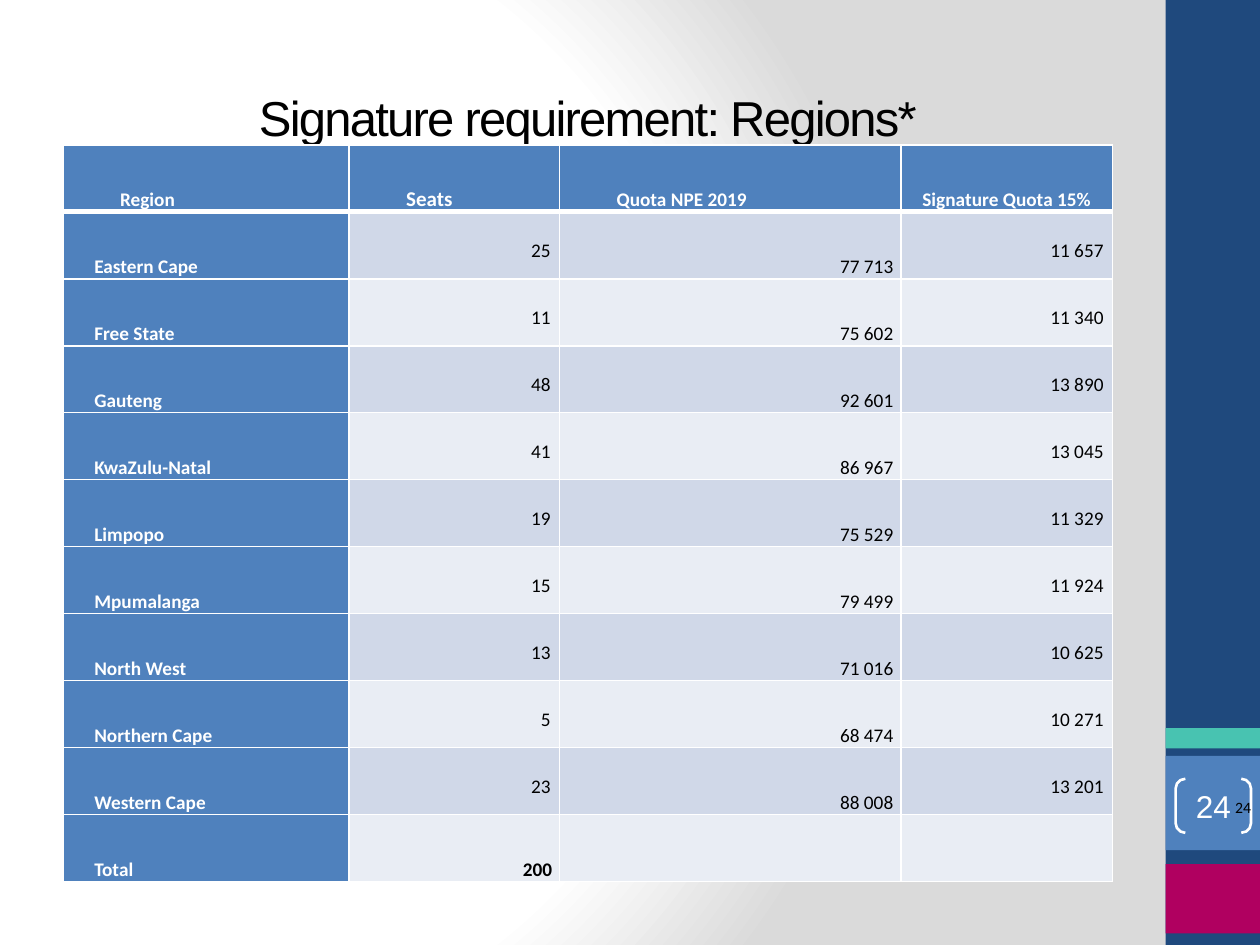
from pptx import Presentation
from pptx.dml.color import RGBColor
from pptx.enum.shapes import MSO_SHAPE
from pptx.enum.text import MSO_ANCHOR, PP_ALIGN
from pptx.oxml import parse_xml
from pptx.oxml.ns import nsdecls
from pptx.util import Cm, Pt

WHITE = RGBColor(0xFF, 0xFF, 0xFF)
BLACK = RGBColor(0, 0, 0)
NAVY = RGBColor(0x1F, 0x49, 0x7D)
BLUE = RGBColor(0x4F, 0x81, 0xBD)
TEAL = RGBColor(0x48, 0xC3, 0xB1)
PINK = RGBColor(0xB0, 0x00, 0x60)
DARK = RGBColor(0xD0, 0xD8, 0xE8)
LIGHT = RGBColor(0xE9, 0xED, 0xF4)

HEADS = ["Region", "Seats", "Quota NPE 2019", "Signature Quota 15%"]
ROWS = [
    ["Eastern Cape", "25", "77 713", "11 657"],
    ["Free State", "11", "75 602", "11 340"],
    ["Gauteng", "48", "92 601", "13 890"],
    ["KwaZulu-Natal", "41", "86 967", "13 045"],
    ["Limpopo", "19", "75 529", "11 329"],
    ["Mpumalanga", "15", "79 499", "11 924"],
    ["North West", "13", "71 016", "10 625"],
    ["Northern Cape", "5", "68 474", "10 271"],
    ["Western Cape", "23", "88 008", "13 201"],
    ["Total", "200", "", ""],
]
WIDTHS = [5.77, 4.24, 6.88, 4.27]
ROW_H = 1.35


def style(frame, size, color, align, name="Calibri", bold=False):
    """Format the single paragraph of a text frame."""
    para = frame.paragraphs[0]
    para.alignment = align
    font = para.runs[0].font if para.runs else para.font
    font.size = Pt(size)
    font.name = name
    font.bold = bold
    font.color.rgb = color
    return para


def border(cell, top, bottom):
    """Give a cell white edges; top and bottom are widths in points."""
    props = cell._tc.get_or_add_tcPr()
    edges = [("L", 1), ("R", 1), ("T", top), ("B", bottom)]
    for spot, (side, width) in enumerate(edges):
        props.insert(spot, parse_xml(
            f'<a:ln{side} {nsdecls("a")} w="{Pt(width)}"><a:solidFill>'
            f'<a:srgbClr val="{WHITE}"/></a:solidFill></a:ln{side}>'))


prs = Presentation()
prs.slide_width = Cm(25.4)
prs.slide_height = Cm(19.05)
slide = prs.slides.add_slide(prs.slide_layouts[5])
shapes = slide.shapes

# Background: white glow fading to grey
back = slide.background
back.fill.solid()
solid = back._cSld.bg.bgPr[0]
solid.getparent().replace(solid, parse_xml(
    f'<a:gradFill {nsdecls("a")} rotWithShape="1"><a:gsLst>'
    '<a:gs pos="0"><a:srgbClr val="FFFFFF"/></a:gs>'
    '<a:gs pos="75000"><a:srgbClr val="FFFFFF"/></a:gs>'
    '<a:gs pos="100000"><a:srgbClr val="DADADA"/></a:gs></a:gsLst>'
    '<a:path path="circle"><a:fillToRect l="20000" t="50000" r="100000" '
    'b="50000"/></a:path></a:gradFill>'))

# Side bands
for top, height, color in [(0, 19.05, NAVY), (15.24, 1.9, BLUE),
                           (14.68, 0.41, TEAL), (17.42, 1.4, PINK)]:
    band = shapes.add_shape(MSO_SHAPE.RECTANGLE, Cm(23.5), Cm(top),
                            Cm(1.9), Cm(height))
    band.shadow.inherit = False
    band.fill.solid()
    band.fill.fore_color.rgb = color
    band.line.fill.background()

# Title
title = shapes.title
title.left, title.top = Cm(1.27), Cm(0.76)
title.width, title.height = Cm(21.16), Cm(3.18)
frame = title.text_frame
frame.text = "Signature requirement: Regions*"
frame.vertical_anchor = MSO_ANCHOR.MIDDLE
para = style(frame, 28, BLACK, PP_ALIGN.CENTER, "Arial")
para.runs[0].font._element.set("spc", "-100")

# Table
count = len(ROWS) + 1
table = shapes.add_table(count, len(HEADS), Cm(1.27), Cm(2.92),
                         Cm(sum(WIDTHS)), Cm(ROW_H * count)).table
for col, width in zip(table.columns, WIDTHS):
    col.width = Cm(width)
for row in table.rows:
    row.height = Cm(ROW_H)

for r, texts in enumerate([HEADS] + ROWS):
    head, total = r == 0, r == count - 1
    for c, text in enumerate(texts):
        cell = table.cell(r, c)
        label = head or c == 0
        raised = not label and not total and c != 2
        cell.text_frame.text = text
        cell.fill.solid()
        cell.fill.fore_color.rgb = BLUE if label else DARK if r % 2 else LIGHT
        cell.vertical_anchor = MSO_ANCHOR.TOP if raised else MSO_ANCHOR.BOTTOM
        cell.margin_left = cell.margin_right = Cm(0.18 if raised else 0.15)
        cell.margin_top = Cm(0.51 if raised else 0)
        cell.margin_bottom = 0
        if head and c == 3:
            align = PP_ALIGN.CENTER
        else:
            align = PP_ALIGN.LEFT if label else PP_ALIGN.RIGHT
        para = style(cell.text_frame, 12 if head and c == 1 else 11,
                     WHITE if label else BLACK, align, bold=label or total)
        if raised:
            para.line_spacing = 1.07
        elif align != PP_ALIGN.CENTER:
            props = para._p.get_or_add_pPr()
            props.set("marL", "0")
            props.set("indent", str(Cm(1 if head else 0.48)))
        border(cell, 3 if r == 1 else 1, 3 if head else 1)

# Page number in brackets, and the small one beside it
mark = shapes.add_shape(MSO_SHAPE.DOUBLE_BRACKET, Cm(23.7), Cm(15.7),
                        Cm(1.52), Cm(1.09))
mark.adjustments[0] = 0.18
mark.shadow.inherit = False
mark.fill.background()
mark.line.color.rgb = WHITE
mark.line.width = Pt(1.5)
small = shapes.add_textbox(Cm(23.42), Cm(15.9), Cm(1.98), Cm(0.76))
for box, size, color, align, name, left, edge, right in [
        (mark, 18, WHITE, PP_ALIGN.CENTER, "Arial", 0, 0, 0),
        (small, 9, BLACK, PP_ALIGN.RIGHT, "Calibri", 0.1, 0.1, 0.18)]:
    frame = box.text_frame
    frame.text = "24"
    frame.word_wrap = True
    frame.vertical_anchor = MSO_ANCHOR.MIDDLE
    frame.margin_left, frame.margin_right = Cm(left), Cm(right)
    frame.margin_top = frame.margin_bottom = Cm(edge)
    style(frame, size, color, align, name)

prs.save("out.pptx")
